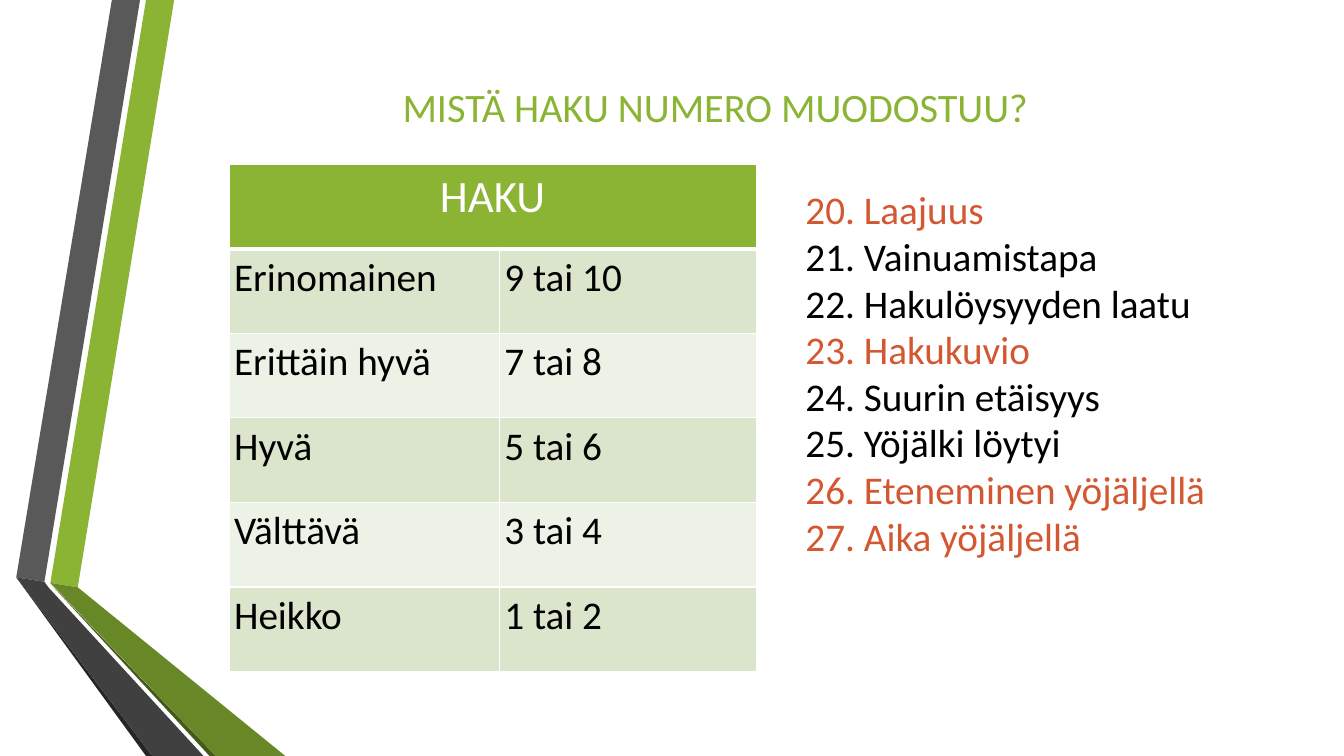
from pptx import Presentation
from pptx.dml.color import RGBColor
from pptx.enum.text import MSO_ANCHOR, PP_ALIGN
from pptx.oxml import parse_xml
from pptx.oxml.ns import nsdecls
from pptx.util import Cm, Pt

GREEN, ORANGE, BLACK, WHITE = "8BB434", "D35731", "000000", "FFFFFF"
INSET = Cm(0.13)


def color(value):
    return RGBColor.from_string(value)


def write(para, text, size, shade):
    para.text = text
    para.font.name = "Calibri"
    para.font.size = Pt(size)
    para.font.color.rgb = color(shade)


deck = Presentation()
deck.slide_width, deck.slide_height = Cm(33.87), Cm(19.05)
page = deck.slides.add_slide(deck.slide_layouts[6])

# Folded ribbons on the left, corner points in cm
ribbons = [
    (GREEN, [(1.27, 14.69), (1.96, 14.8), (4.39, 0), (3.68, 0)]),
    ("595959", [(3.53, 0), (2.82, 0), (0.41, 14.55), (1.12, 14.66)]),
    ("262626", [(0.41, 14.55), (3.68, 19.05), (3.84, 19.05)]),
    ("455A1A", [(1.27, 14.71), (5.28, 19.05), (5.44, 19.05)]),
    ("688727", [(1.27, 14.69), (5.44, 19.05), (7.19, 19.05), (1.96, 14.8)]),
    ("404040", [(0.41, 14.55), (3.84, 19.05), (5.13, 19.05), (1.22, 14.8), (1.12, 14.66)]),
]
for shade, corners in ribbons:
    points = [(Cm(x), Cm(y)) for x, y in corners]
    builder = page.shapes.build_freeform(*points[0])
    builder.add_line_segments(points[1:], close=True)
    ribbon = builder.convert_to_shape()
    ribbon.shadow.inherit = False
    ribbon.fill.solid()
    ribbon.fill.fore_color.rgb = color(shade)
    ribbon.line.fill.background()

# Title and list of scored items
items = [
    ("20. Laajuus", ORANGE),
    ("21. Vainuamistapa", BLACK),
    ("22. Hakulöysyyden laatu", BLACK),
    ("23. Hakukuvio", ORANGE),
    ("24. Suurin etäisyys", BLACK),
    ("25. Yöjälki löytyi", BLACK),
    ("26. Eteneminen yöjäljellä", ORANGE),
    ("27. Aika yöjäljellä", ORANGE),
]
title = page.shapes.add_textbox(Cm(4.11), Cm(1.91), Cm(27.84), Cm(1.52))
listing = page.shapes.add_textbox(Cm(20.17), Cm(4.6), Cm(12.32), Cm(11.53))
for box in (title, listing):
    frame = box.text_frame
    frame.word_wrap = True
    frame.margin_left = frame.margin_right = INSET
    frame.margin_top = frame.margin_bottom = INSET

title.text_frame.vertical_anchor = MSO_ANCHOR.MIDDLE
heading = title.text_frame.paragraphs[0]
write(heading, "MISTÄ HAKU NUMERO MUODOSTUU?", 28.8, GREEN)
heading.alignment = PP_ALIGN.CENTER

listing.text_frame.text = "\n".join(text for text, shade in items)
for para, (text, shade) in zip(listing.text_frame.paragraphs, items):
    write(para, text, 28, shade)
    para.line_spacing = 0.99

# Grade table
rows = [
    ("HAKU", ""),
    ("Erinomainen", "9 tai 10"),
    ("Erittäin hyvä", "7 tai 8"),
    ("Hyvä", "5 tai 6"),
    ("Välttävä", "3 tai 4"),
    ("Heikko", "1 tai 2"),
]
row_height = Cm(2.13)
grades = page.shapes.add_table(
    len(rows), 2, Cm(5.77), Cm(4.14), Cm(13.29), row_height * len(rows)
).table
grades.columns[0].width, grades.columns[1].width = Cm(6.81), Cm(6.48)
grades.cell(0, 0).merge(grades.cell(0, 1))

for r, texts in enumerate(rows):
    header = r == 0
    grades.rows[r].height = row_height
    for c, text in enumerate(texts):
        cell = grades.cell(r, c)
        cell.margin_left = cell.margin_right = INSET
        cell.margin_top = cell.margin_bottom = INSET
        cell.fill.solid()
        cell.fill.fore_color.rgb = color(GREEN if header else "DAE5CC" if r % 2 else "EDF2E7")
        if text:
            para = cell.text_frame.paragraphs[0]
            write(para, text, 32 if header else 28, WHITE if header else BLACK)
            para.alignment = PP_ALIGN.CENTER if header else PP_ALIGN.LEFT
        # White borders, heavier under the header
        for index, side in enumerate("LRTB"):
            heavy = (r, side) in ((0, "B"), (1, "T"))
            border = parse_xml(
                f'<a:ln{side} {nsdecls("a")} w="{Pt(3 if heavy else 1)}">'
                f'<a:solidFill><a:srgbClr val="{WHITE}"/></a:solidFill></a:ln{side}>'
            )
            cell._tc.get_or_add_tcPr().insert(index, border)

deck.save("out.pptx")
